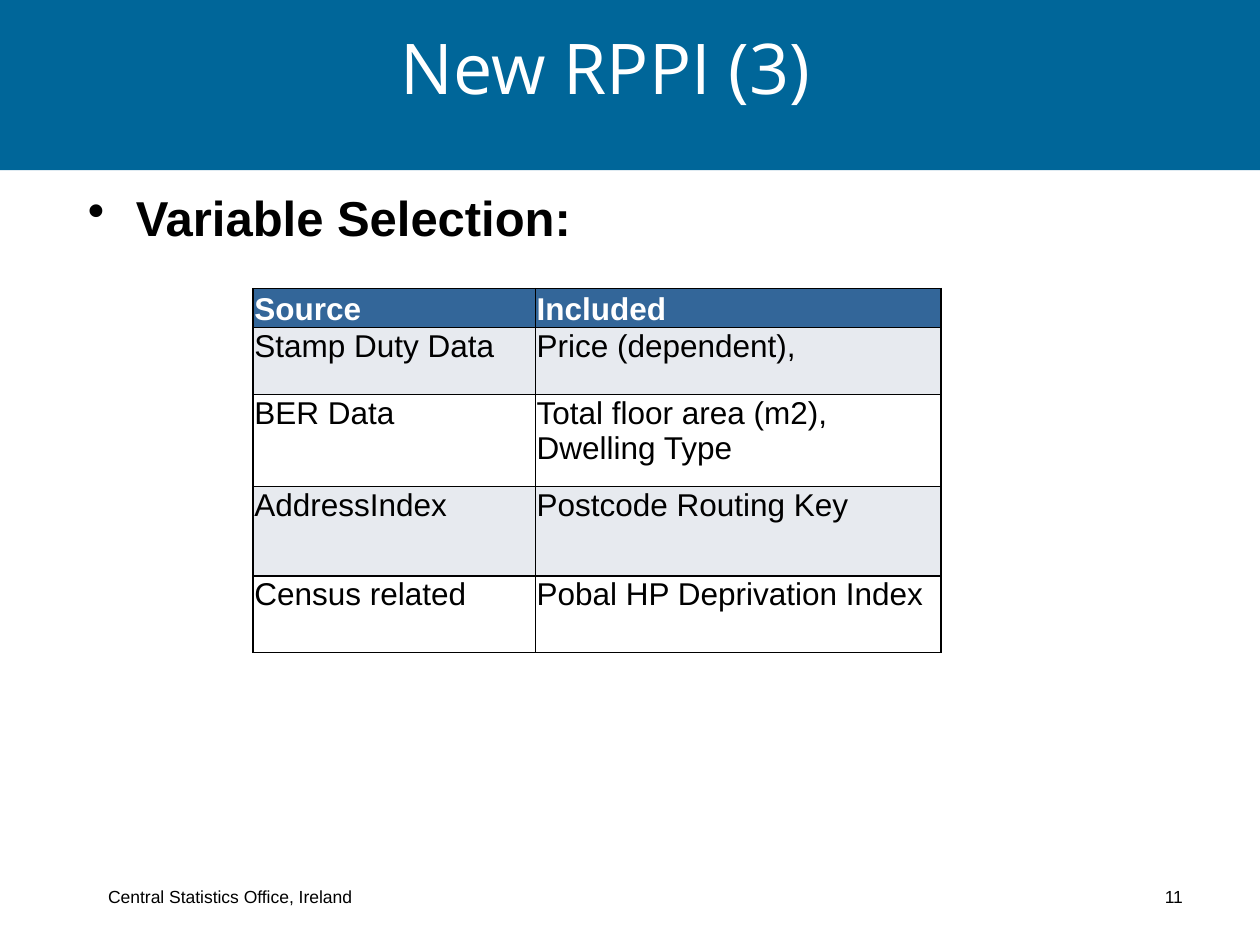
from dataclasses import dataclass

from lxml import etree
from pptx import Presentation
from pptx.dml.color import RGBColor
from pptx.enum.shapes import MSO_SHAPE
from pptx.enum.text import MSO_ANCHOR, PP_ALIGN
from pptx.oxml.ns import qn
from pptx.util import Inches, Pt

RECTANGLE = MSO_SHAPE.RECTANGLE
TOP, MIDDLE, BOTTOM = MSO_ANCHOR.TOP, MSO_ANCHOR.MIDDLE, MSO_ANCHOR.BOTTOM
LEFT, CENTER = PP_ALIGN.LEFT, PP_ALIGN.CENTER


@dataclass(frozen=True)
class Theme:
    banner: str = "006699"
    header: str = "336699"
    band: str = "E7EAEF"
    light: str = "FFFFFF"
    dark: str = "000000"
    title_font: str = "Open Sans"
    body_font: str = "Arial"
    title_size: int = 40
    heading_size: int = 28
    table_size: int = 18
    footer_size: int = 10


THEME = Theme()

COLUMN_WIDTHS = [2.24, 3.22]
ROW_HEIGHTS = [0.28, 0.53, 0.73, 0.71, 0.61]
SOURCES = [
    ("Source", "Included"),
    ("Stamp Duty Data", "Price (dependent),"),
    ("BER Data", "Total floor area (m2), Dwelling Type"),
    ("AddressIndex", "Postcode Routing Key"),
    ("Census related", "Pobal HP Deprivation Index"),
]


def rgb(color):
    return RGBColor.from_string(color)


def set_font(paragraph, size, color, name=THEME.body_font, bold=False):
    font = paragraph.font
    font.size, font.name, font.bold = Pt(size), name, bold
    font.color.rgb = rgb(color)


def add_banner(slide, left, top, width, height):
    banner = slide.shapes.add_shape(
        RECTANGLE, Inches(left), Inches(top), Inches(width), Inches(height))
    banner.shadow.inherit = False
    banner.fill.solid()
    banner.fill.fore_color.rgb = rgb(THEME.banner)
    banner.line.fill.background()
    return banner


def add_title(slide, text):
    title = add_banner(slide, 1.81, -0.1, 5.99, 1.25)
    title.text_frame.vertical_anchor = MIDDLE
    paragraph = title.text_frame.paragraphs[0]
    paragraph.text = text
    paragraph.alignment = CENTER
    set_font(paragraph, THEME.title_size, THEME.light, THEME.title_font)


def add_text(slide, text, left, top, width, height, anchor):
    """Add a one-paragraph text box and return its paragraph."""
    box = slide.shapes.add_textbox(
        Inches(left), Inches(top), Inches(width), Inches(height))
    box.text_frame.word_wrap = True
    box.text_frame.vertical_anchor = anchor
    paragraph = box.text_frame.paragraphs[0]
    paragraph.text = text
    paragraph.alignment = LEFT
    return paragraph


def add_heading(slide, text):
    heading = add_text(slide, text, 0.6, 1.44, 8.44, 0.65, TOP)
    properties = heading._p.get_or_add_pPr()
    properties.set("marL", str(Inches(0.38)))
    properties.set("indent", str(Inches(-0.38)))
    etree.SubElement(properties, qn("a:buChar"), char="•")
    set_font(heading, THEME.heading_size, THEME.dark, bold=True)


def add_footer(slide, office, number):
    footer = add_text(slide, f"{office}\t{number}", 0.76, 6.94, 8.85, 0.31, BOTTOM)
    footer.line_spacing = 0.8
    tabs = etree.SubElement(footer._p.get_or_add_pPr(), qn("a:tabLst"))
    etree.SubElement(tabs, qn("a:tab"), pos=str(Inches(8.53)), algn="r")
    set_font(footer, THEME.footer_size, THEME.dark)


def add_borders(cell):
    properties = cell._tc.get_or_add_tcPr()
    for side in ("a:lnL", "a:lnR", "a:lnT", "a:lnB"):
        border = etree.SubElement(properties, qn(side), w=str(Pt(1)))
        fill = etree.SubElement(border, qn("a:solidFill"))
        etree.SubElement(fill, qn("a:srgbClr"), val=THEME.dark)


def style_cell(cell, row):
    is_header = row == 0
    cell.margin_left = cell.margin_right = cell.margin_top = Inches(0.01)
    cell.margin_bottom = 0
    cell.vertical_anchor = BOTTOM if is_header else TOP
    add_borders(cell)
    if is_header or row % 2:
        cell.fill.solid()
        cell.fill.fore_color.rgb = rgb(THEME.header if is_header else THEME.band)
    else:
        cell.fill.background()
    set_font(cell.text_frame.paragraphs[0], THEME.table_size,
             THEME.light if is_header else THEME.dark, bold=is_header)


def add_source_table(slide):
    table = slide.shapes.add_table(
        len(SOURCES), len(COLUMN_WIDTHS), Inches(2.01), Inches(2.29),
        Inches(sum(COLUMN_WIDTHS)), Inches(sum(ROW_HEIGHTS))).table
    table.horz_banding = False
    for column, width in zip(table.columns, COLUMN_WIDTHS):
        column.width = Inches(width)
    for row, (height, texts) in enumerate(zip(ROW_HEIGHTS, SOURCES)):
        table.rows[row].height = Inches(height)
        for column, text in enumerate(texts):
            cell = table.cell(row, column)
            cell.text = text
            style_cell(cell, row)


def main():
    presentation = Presentation()
    presentation.slide_width, presentation.slide_height = Inches(10), Inches(7.5)
    slide = presentation.slides.add_slide(presentation.slide_layouts[6])
    add_banner(slide, 0, -0.29, 10, 1.64)
    add_title(slide, "New RPPI (3)")
    add_heading(slide, "Variable Selection:")
    add_footer(slide, "Central Statistics Office, Ireland", 11)
    add_source_table(slide)
    presentation.save("out.pptx")


if __name__ == "__main__":
    main()
